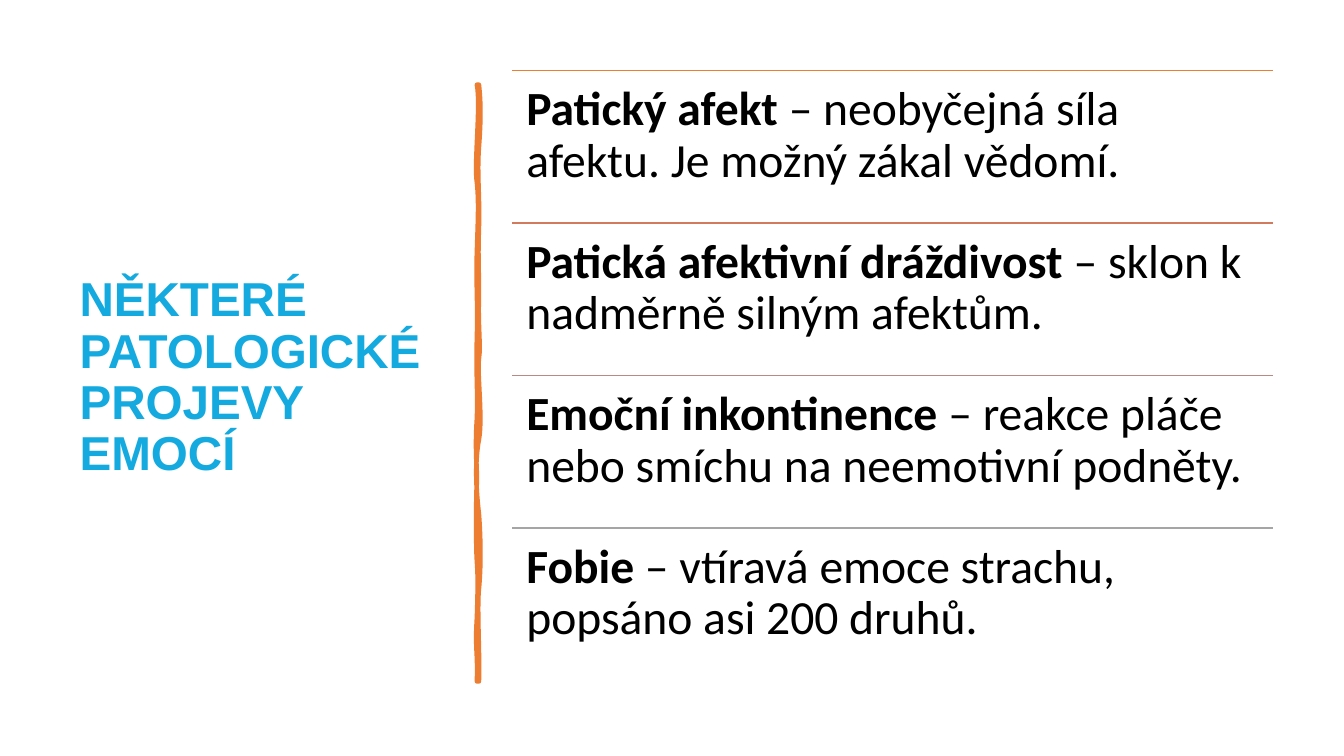
import pptx
import pptx.dml.color
import pptx.enum.shapes
import pptx.enum.text
import pptx.util
from lxml import etree
from pptx.oxml.ns import qn
from pptx.util import Inches

TITLE = "NĚKTERÉ PATOLOGICKÉ PROJEVY EMOCÍ"
# bold term, explanation, colour of the rule above
ENTRIES = [
    ("Patický afekt ", "– neobyčejná síla afektu. Je možný zákal vědomí.", "orange"),
    ("Patická afektivní dráždivost", " – sklon k nadměrně silným afektům.", "copper"),
    ("Emoční inkontinence ", "– reakce pláče nebo smíchu na neemotivní podněty.", "mauve"),
    ("Fobie", " – vtíravá emoce strachu, popsáno asi 200 druhů.", "gray"),
]
COLORS = {
    "title": "14AAE0", "text": "000000", "orange": "ED7D31",
    "copper": "D17B5C", "mauve": "B98A82", "gray": "A5A5A5",
}
SIZE = 34
LIST_LEFT, LIST_TOP, LIST_WIDTH, LIST_HEIGHT = 5.08, 0.7, 7.55, 6.05
ROW_HEIGHT = LIST_HEIGHT / len(ENTRIES)
INSET = 0.14

# Hand-drawn divider: start point, then cubic curves (two controls and an end)
BAR_START = (4.75, 0.84)
BAR_CURVES = [
    ((4.77, 1.02), (4.77, 1.19), (4.75, 1.46)),
    ((4.73, 1.73), (4.76, 1.95), (4.75, 2.26)),
    ((4.74, 2.57), (4.75, 2.62), (4.75, 2.94)),
    ((4.74, 3.25), (4.77, 3.42), (4.75, 3.56)),
    ((4.73, 3.7), (4.79, 4.14), (4.75, 4.36)),
    ((4.71, 4.57), (4.72, 4.84), (4.75, 5.1)),
    ((4.77, 5.36), (4.77, 5.64), (4.75, 5.84)),
    ((4.73, 6.03), (4.76, 6.5), (4.75, 6.76)),
    ((4.74, 6.76), (4.73, 6.76), (4.73, 6.76)),
    ((4.74, 6.46), (4.71, 6.44), (4.73, 6.13)),
    ((4.74, 5.83), (4.74, 5.7), (4.73, 5.57)),
    ((4.72, 5.44), (4.72, 4.95), (4.73, 4.77)),
    ((4.73, 4.59), (4.71, 4.45), (4.73, 4.15)),
    ((4.74, 3.86), (4.72, 3.73), (4.73, 3.35)),
    ((4.74, 2.98), (4.72, 2.81), (4.73, 2.5)),
    ((4.74, 2.18), (4.75, 2.0), (4.73, 1.81)),
    ((4.7, 1.63), (4.77, 1.04), (4.73, 0.84)),
    ((4.74, 0.84), (4.74, 0.84), (4.75, 0.84)),
]


def rgb(name):
    return pptx.dml.color.RGBColor.from_string(COLORS[name])


def style(span, face, color, bold):
    span.font.name = face
    span.font.size = pptx.util.Pt(SIZE)
    span.font.bold = bold
    span.font.color.rgb = rgb(color)


def bend_segments(shape):
    """Turn every three straight segments of a freeform into one cubic curve."""
    segments = list(shape.element.iter(qn("a:lnTo")))
    for index in range(0, len(segments), 3):
        curve = etree.Element(qn("a:cubicBezTo"))
        segments[index].addprevious(curve)
        for segment in segments[index:index + 3]:
            curve.append(segment[0])
            segment.getparent().remove(segment)


def add_title(page):
    title = page.shapes.title
    title.left, title.top = Inches(0.69), Inches(0.7)
    title.width, title.height = Inches(3.74), Inches(6.11)
    frame = title.text_frame
    frame.text = TITLE
    frame.word_wrap = True
    frame.auto_size = pptx.enum.text.MSO_AUTO_SIZE.NONE
    frame.vertical_anchor = pptx.enum.text.MSO_ANCHOR.MIDDLE
    para = frame.paragraphs[0]
    para.alignment = pptx.enum.text.PP_ALIGN.LEFT
    para.line_spacing = 0.9
    style(para.runs[0], "Arial", "title", True)


def add_divider(page):
    builder = page.shapes.build_freeform(*map(Inches, BAR_START))
    points = [tuple(map(Inches, point)) for curve in BAR_CURVES for point in curve]
    builder.add_line_segments(points, close=True)
    bar = builder.convert_to_shape()
    bend_segments(bar)
    bar.shadow.inherit = False
    bar.fill.solid()
    bar.fill.fore_color.rgb = rgb("orange")
    bar.line.color.rgb = rgb("orange")
    bar.line.width = pptx.util.Pt(3.25)


def add_entry(page, top, term, explanation, color):
    left, width = Inches(LIST_LEFT), Inches(LIST_WIDTH)
    rule = page.shapes.add_connector(
        pptx.enum.shapes.MSO_CONNECTOR.STRAIGHT, left, top, left + width, top)
    rule.line.color.rgb = rgb(color)
    rule.line.width = pptx.util.Pt(1)
    etree.SubElement(rule.element.spPr, qn("a:effectLst"))

    box = page.shapes.add_textbox(left, top, width, Inches(ROW_HEIGHT))
    frame = box.text_frame
    frame.word_wrap = True
    frame.margin_left = frame.margin_right = Inches(INSET)
    frame.margin_top = frame.margin_bottom = Inches(INSET)
    para = frame.paragraphs[0]
    para.line_spacing = 0.9
    for words, bold in ((term, True), (explanation, False)):
        span = para.add_run()
        span.text = words
        style(span, "Calibri", "text", bold)


def main():
    deck = pptx.Presentation()
    deck.slide_width, deck.slide_height = Inches(13.33), Inches(7.5)
    page = deck.slides.add_slide(deck.slide_layouts.get_by_name("Title Only"))
    add_title(page)
    add_divider(page)
    for row, entry in enumerate(ENTRIES):
        add_entry(page, Inches(LIST_TOP + row * ROW_HEIGHT), *entry)
    deck.save("out.pptx")


if __name__ == "__main__":
    main()
